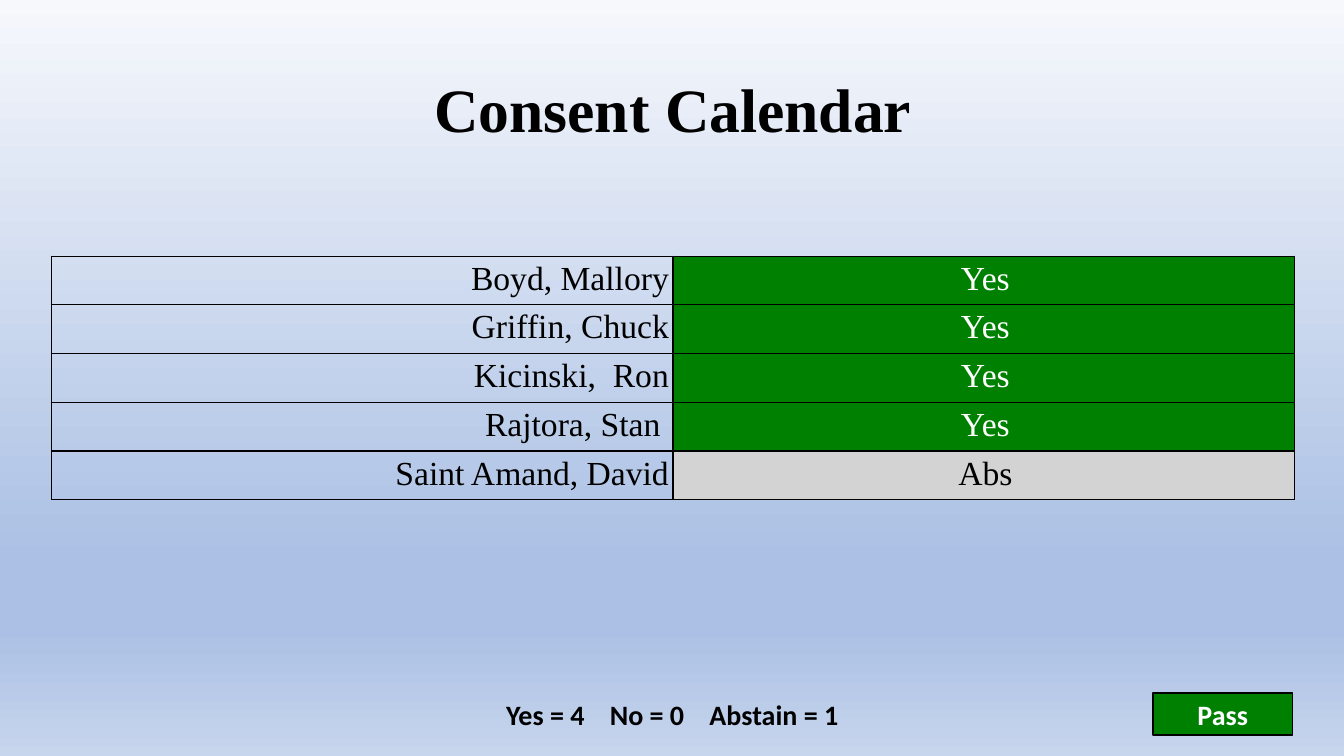
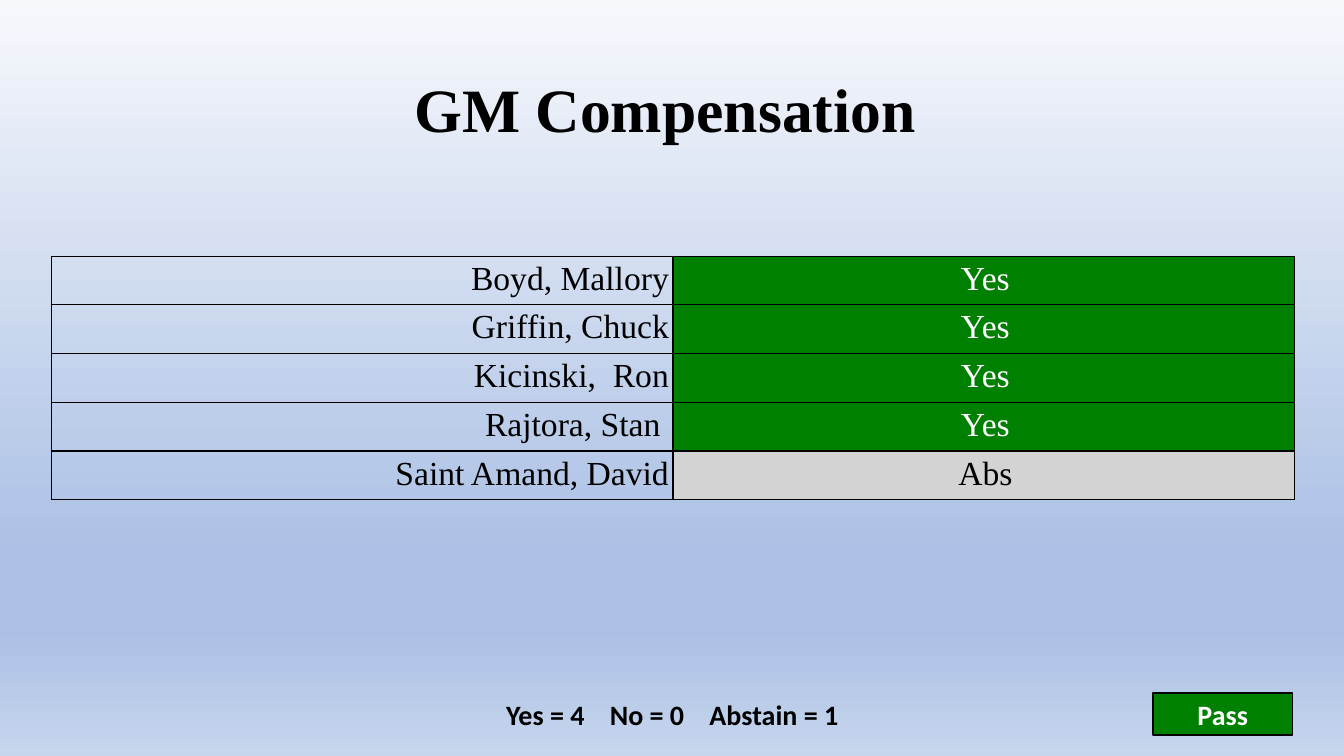
from collections import Counter

from lxml.etree import SubElement
from pptx import Presentation
from pptx.dml.color import RGBColor
from pptx.enum.shapes import MSO_SHAPE
from pptx.enum.text import MSO_ANCHOR, MSO_AUTO_SIZE, PP_ALIGN
from pptx.oxml.ns import qn
from pptx.util import Emu, Pt

SLIDE_WIDTH, SLIDE_HEIGHT = 1280, 720
LEFT, CONTENT_WIDTH = 49, 1184
TABLE_TOP, ROW_HEIGHT = 244, 43
FOOTER_TOP, FOOTER_HEIGHT = 660, 40
SERIF, SANS = "Times New Roman", "Calibri"
COLORS = {
    "black": "000000",
    "white": "FFFFFF",
    "green": "008000",
    "gray": "D3D3D3",
    "sky": "F6F8FC",
    "blue": "ABC0E4",
    "pale": "C7D5ED",
}
BACKGROUND_STOPS = [(0, "sky"), (74, "blue"), (83, "blue"), (100, "pale")]
VOTE_STYLES = {"Yes": ("green", "white"), "Abs": ("gray", "black")}
TALLY_LABELS = {"Yes": "Yes", "No": "No", "Abs": "Abstain"}
VOTES = [
    ("Boyd, Mallory", "Yes"),
    ("Griffin, Chuck", "Yes"),
    ("Kicinski,  Ron", "Yes"),
    ("Rajtora, Stan ", "Yes"),
    ("Saint Amand, David", "Abs"),
]
MOTIONS = [
    ("Consent Calendar", VOTES, "Pass"),
    ("GM Compensation ", VOTES, "Pass"),
]


def px(length):
    return Emu(length * 9525)


def box(left, top, width, height):
    return px(left), px(top), px(width), px(height)


def color(name):
    return RGBColor.from_string(COLORS[name])


def write(text_frame, text, font_name, size, color_name, bold=False, align=PP_ALIGN.CENTER):
    """Fill the frame with one formatted paragraph and return it."""
    text_frame.text = text
    paragraph = text_frame.paragraphs[0]
    paragraph.alignment = align
    font = paragraph.font
    font.name, font.size, font.bold = font_name, Pt(size), bold
    font.color.rgb = color(color_name)
    return paragraph


def set_background(master):
    """Give all slides the shared vertical gradient."""
    fill = master.background.fill
    fill.gradient()
    fill.gradient_angle = 270
    stops = master.element.find(f".//{qn('p:bg')}//{qn('a:gsLst')}")
    for stop in list(stops):
        stops.remove(stop)
    for percent, name in BACKGROUND_STOPS:
        stop = SubElement(stops, qn("a:gs"), pos=str(percent * 1000))
        SubElement(stop, qn("a:srgbClr"), val=COLORS[name])


def format_title(title, text):
    title.left, title.top, title.width, title.height = box(LEFT, 20, CONTENT_WIDTH, 175)
    frame = title.text_frame
    frame.auto_size = MSO_AUTO_SIZE.NONE
    frame.vertical_anchor = MSO_ANCHOR.MIDDLE
    write(frame, text, SERIF, 44, "black", bold=True).line_spacing = 0.9


def add_borders(cell):
    properties = cell._tc.get_or_add_tcPr()
    for side in ("lnL", "lnR", "lnT", "lnB"):
        line = SubElement(properties, qn(f"a:{side}"), w=str(Pt(1)))
        line_fill = SubElement(line, qn("a:solidFill"))
        SubElement(line_fill, qn("a:srgbClr"), val=COLORS["black"])


def format_cell(cell, text, color_name, align, fill_name=None):
    cell.margin_left = px(7)
    cell.margin_right = cell.margin_top = cell.margin_bottom = px(4)
    add_borders(cell)
    if fill_name:
        cell.fill.solid()
        cell.fill.fore_color.rgb = color(fill_name)
    else:
        cell.fill.background()
    write(cell.text_frame, text, SERIF, 24, color_name, align=align)


def add_vote_table(slide, votes):
    area = box(LEFT, TABLE_TOP, CONTENT_WIDTH, ROW_HEIGHT * len(votes))
    table = slide.shapes.add_table(len(votes), 2, *area).table
    table.first_row = table.horz_banding = False
    for row, (member, vote) in enumerate(votes):
        fill_name, text_color = VOTE_STYLES[vote]
        format_cell(table.cell(row, 0), member, "black", PP_ALIGN.RIGHT)
        format_cell(table.cell(row, 1), vote, text_color, PP_ALIGN.CENTER, fill_name)


def add_result(slide, result):
    badge = slide.shapes.add_shape(
        MSO_SHAPE.RECTANGLE, *box(1098, FOOTER_TOP, 133, FOOTER_HEIGHT))
    badge.shadow.inherit = False
    badge.fill.solid()
    badge.fill.fore_color.rgb = color("green")
    badge.line.color.rgb = color("black")
    badge.line.width = Pt(1)
    badge.text_frame.word_wrap = False
    write(badge.text_frame, result, SANS, 20, "white", bold=True)


def add_tally(slide, votes):
    counts = Counter(vote for _, vote in votes)
    text = "    ".join(f"{label} = {counts[vote]}" for vote, label in TALLY_LABELS.items())
    tally = slide.shapes.add_textbox(*box(195, FOOTER_TOP, 891, FOOTER_HEIGHT))
    tally.text_frame.word_wrap = False
    write(tally.text_frame, text, SANS, 20, "black", bold=True)


def main():
    presentation = Presentation()
    presentation.slide_width = px(SLIDE_WIDTH)
    presentation.slide_height = px(SLIDE_HEIGHT)
    set_background(presentation.slide_master)
    title_only = presentation.slide_layouts.get_by_name("Title Only")
    for title, votes, result in MOTIONS:
        slide = presentation.slides.add_slide(title_only)
        format_title(slide.shapes.title, title)
        add_result(slide, result)
        add_tally(slide, votes)
        add_vote_table(slide, votes)
    presentation.save("out.pptx")


if __name__ == "__main__":
    main()
